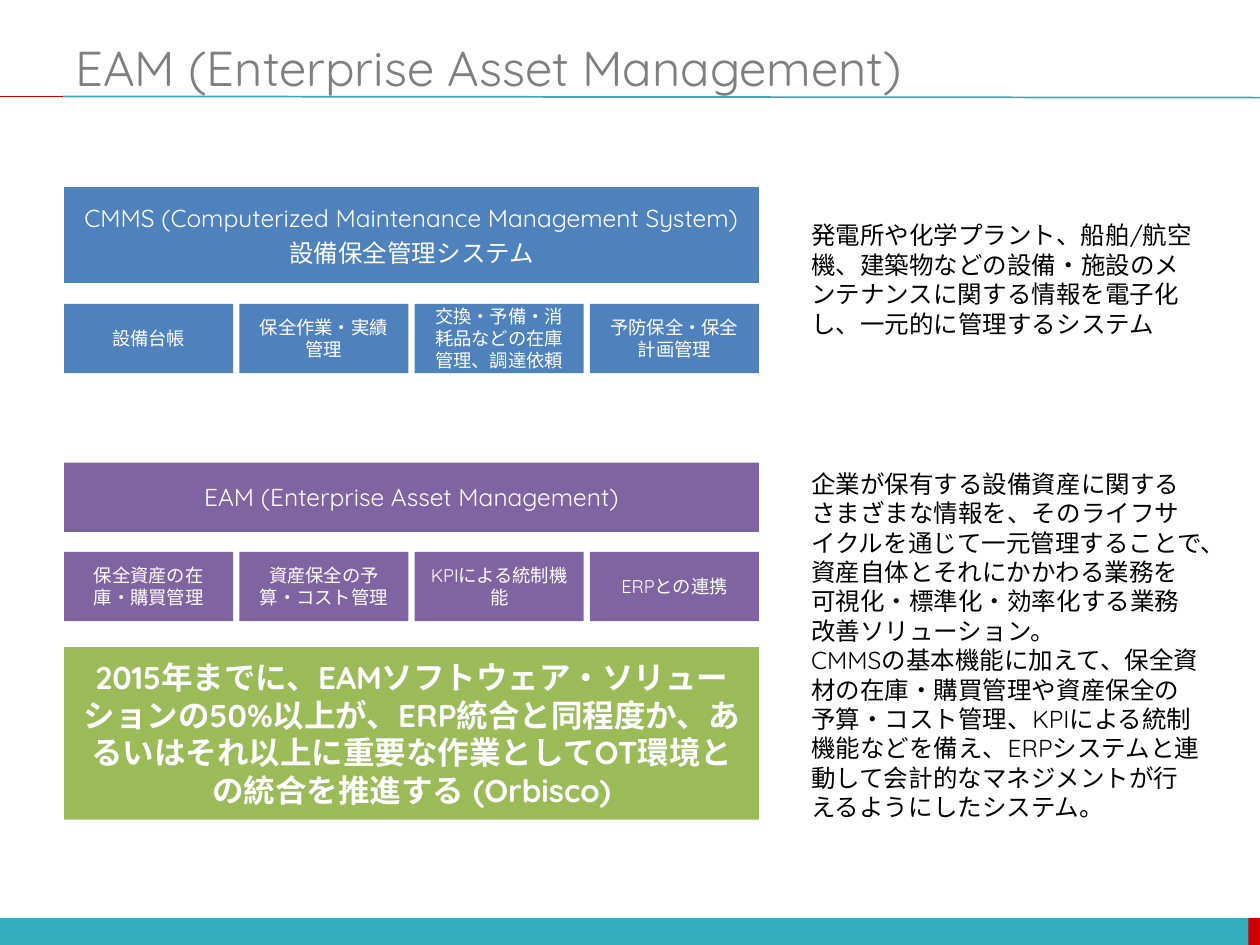
from pptx import Presentation
from pptx.dml.color import RGBColor
from pptx.enum import shapes as sh, text as tx
from pptx.oxml import ns, xmlchemy as xc
from pptx.util import Pt

FONT = "Quicksand"
TEAL, RED = "33ACBD", "CC0000"
BLUE, PURPLE, GREEN = "4F81BD", "8064A2", "9BBB59"
WHITE, BLACK, GRAY = "FFFFFF", "000000", "7F7F7F"


def paint(fmt, color):
    """Give a fill or font colour a hex value."""
    if hasattr(fmt, "solid"):
        fmt.solid()
        fmt.fore_color.rgb = RGBColor.from_string(color)
    else:
        fmt.color.rgb = RGBColor.from_string(color)


def write(shape, lines, size=14, color=WHITE, bold=False, align="CENTER",
          anchor="MIDDLE", gap=0):
    """Write one paragraph per line with a shared format."""
    frame = shape.text_frame
    frame.word_wrap = True
    frame.vertical_anchor = getattr(tx.MSO_ANCHOR, anchor)
    for i, line in enumerate(lines):
        para = frame.add_paragraph() if i else frame.paragraphs[0]
        para.alignment = getattr(tx.PP_ALIGN, align)
        para.space_before = Pt(gap if i else 0)
        run = para.add_run()
        run.text = line
        run.font.name, run.font.size, run.font.bold = FONT, Pt(size), bold
        paint(run.font, color)
        east = xc.OxmlElement("a:ea")
        east.set("typeface", FONT)
        run.font._element.find(ns.qn("a:latin")).addnext(east)


def block(slide, box, fill, lines=(), **form):
    """Add a filled rectangle with optional text."""
    rect = slide.shapes.add_shape(sh.MSO_SHAPE.RECTANGLE, *map(Pt, box))
    rect.shadow.inherit = False
    paint(rect.fill, fill)
    rect.line.fill.background()
    if lines:
        write(rect, lines, **form)


def note(slide, box, lines, **form):
    """Add a plain text box aligned left."""
    area = slide.shapes.add_textbox(*map(Pt, box))
    write(area, lines, align="LEFT", **form)


def rule(slide, start, end, color):
    """Draw a thin straight line between two points."""
    line = slide.shapes.add_connector(
        sh.MSO_CONNECTOR.STRAIGHT, *map(Pt, start + end))
    line.line.width = Pt(1)
    paint(line.line, color)
    line._element.spPr.append(xc.OxmlElement("a:effectLst"))


def header(slide, box, title):
    """Place the title above its two-colour rule."""
    left, top, width, height = box
    base = top + height + 0.4
    rule(slide, (left, base), (left + width, base + 0.7), TEAL)
    rule(slide, (0, base), (left, base), RED)
    note(slide, box, [title], size=28, color=GRAY)


def footer(slide, box):
    """Place the bottom bar with its red end."""
    left, top, width, height = box
    block(slide, box, TEAL)
    block(slide, (left + width - 6.6, top, 6.6, height), RED)


def group(slide, box, head, fill, lines, tiles):
    """Place a heading bar with an even row of tiles at the bottom."""
    left, top, width, height = box
    gap, tall = 3.6, 39.6
    wide = (width - gap * (len(tiles) - 1)) / len(tiles)
    block(slide, (left, top, width, head), fill, lines, gap=2.8)
    for i, tile in enumerate(tiles):
        spot = (left + i * (wide + gap), top + height - tall, wide, tall)
        block(slide, spot, fill, [tile], size=10.5)


def main():
    """Build the slide and save it."""
    deck = Presentation()
    deck.slide_width, deck.slide_height = Pt(720), Pt(540)
    slide = deck.slides.add_slide(deck.slide_layouts[6])
    left, width, side, span = 36.7, 397, 456.4, 237
    footer(slide, (0, 524.6, 720, 15.4))
    header(slide, (36, 21.6, 684, 33.1), "EAM (Enterprise Asset Management)")
    group(slide, (left, 107, width, 106.2), 54.7, BLUE,
          ["CMMS (Computerized Maintenance Management System)",
           "設備保全管理システム"],
          ["設備台帳", "保全作業・実績管理",
           "交換・予備・消耗品などの在庫管理、調達依頼",
           "予防保全・保全計画管理"])
    group(slide, (left, 264.3, width, 90.7), 39.6, PURPLE,
          ["EAM (Enterprise Asset Management)"],
          ["保全資産の在庫・購買管理", "資産保全の予算・コスト管理",
           "KPIによる統制機能", "ERPとの連携"])
    block(slide, (left, 369.8, width, 98.6), GREEN,
          ["2015年までに、EAMソフトウェア・ソリューションの50%以上が、"
           "ERP統合と同程度か、あるいはそれ以上に重要な作業として"
           "OT環境との統合を推進する (Orbisco)"], size=18, bold=True)
    note(slide, (side, 122.4, span, 75),
         ["発電所や化学プラント、船舶/航空機、建築物などの設備・施設の"
          "メンテナンスに関する情報を電子化し、一元的に管理するシステム"],
         color=BLACK, anchor="TOP")
    note(slide, (side, 264.3, span, 211),
         ["企業が保有する設備資産に関するさまざまな情報を、"
          "そのライフサイクルを通じて一元管理することで、"
          "資産自体とそれにかかわる業務を可視化・標準化・効率化する"
          "業務改善ソリューション。",
          "CMMSの基本機能に加えて、保全資材の在庫・購買管理や"
          "資産保全の予算・コスト管理、KPIによる統制機能などを備え、"
          "ERPシステムと連動して会計的なマネジメントが"
          "行えるようにしたシステム。"],
         color=BLACK, anchor="TOP")
    deck.save("out.pptx")


if __name__ == "__main__":
    main()
